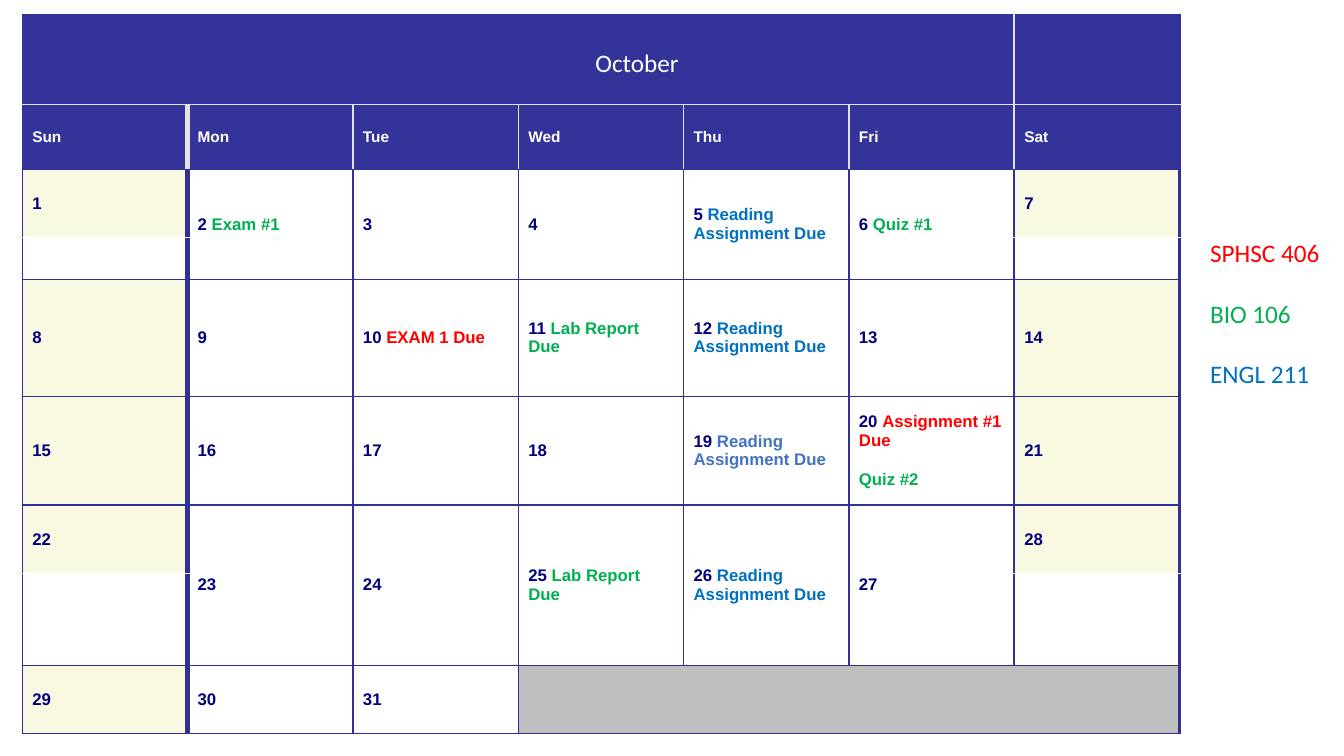
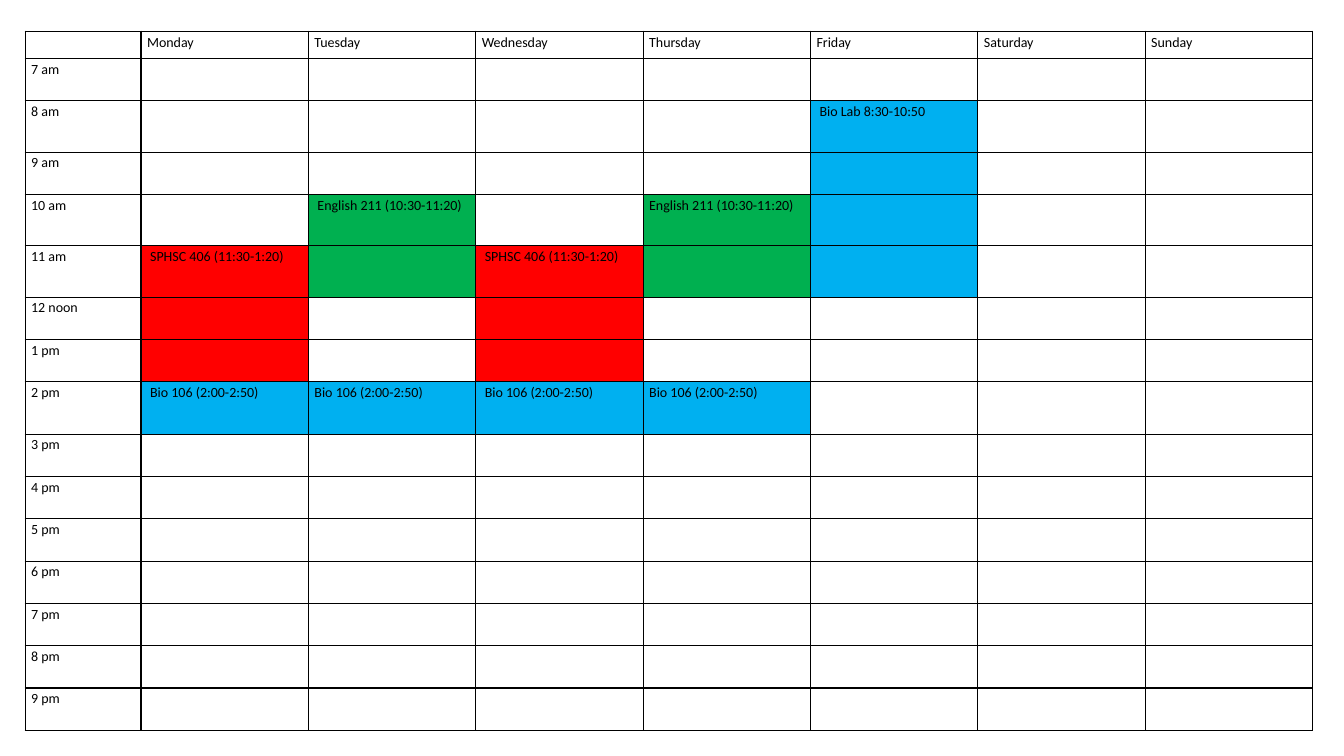
from typing import NamedTuple, Optional

from lxml import etree
from pptx import Presentation, util as u
from pptx.dml.color import RGBColor
from pptx.enum import text as t
from pptx.oxml import ns

# Shared look
NAVY, BAND, LIGHT, CREAM, GRAY = "303096", "333399", "E2E2E2", "F9F9E2", "BFBFBF"
INK, WHITE, BLACK = "00007F", "FFFFFF", "000000"
RED, GREEN, BLUE, STEEL, SKY = "FF0000", "00B050", "0070C0", "4472C4", "00B0F0"
WIDTH, HEIGHT = 13.33, 7.5
NO_TABLE_STYLE = "{2D5ABB26-0587-4C30-8999-92F81FD0307C}"


class Area(NamedTuple):
    """Position and size as percentages of the slide."""
    left: float
    top: float
    width: float = 0
    height: float = 0


class Style(NamedTuple):
    name: str
    size: float
    bold: bool = False
    line_spacing: Optional[float] = None
    gap: float = 0  # points between paragraphs
    align: t.PP_ALIGN = t.PP_ALIGN.LEFT


class Words(NamedTuple):
    text: str
    color: str


class Edge(NamedTuple):
    color: str
    width: float


class Block(NamedTuple):
    """A class that fills some hours on some days of the week."""
    days: tuple
    first_row: int
    rows: int
    color: str
    text: str
    indented: tuple = ()


TITLE = Style("Calibri", 18, align=t.PP_ALIGN.CENTER)
LEGEND = Style("Calibri", 18, gap=21.6)
WEEKDAY = Style("Arial", 11, True)
DAY = Style("Arial", 12, True, gap=14)
HOUR = Style("Calibri", 10, line_spacing=1.15)


def rgb(color: str) -> RGBColor:
    return RGBColor.from_string(color)


def place(area: Area) -> tuple:
    return (u.Inches(WIDTH * area.left / 100), u.Inches(HEIGHT * area.top / 100),
            u.Inches(WIDTH * area.width / 100), u.Inches(HEIGHT * area.height / 100))


def write(frame, lines: list, style: Style) -> None:
    """Write paragraphs, each given as a list of Words."""
    for index, line in enumerate(lines):
        paragraph = frame.add_paragraph() if index else frame.paragraphs[0]
        paragraph.alignment = style.align
        paragraph.line_spacing = style.line_spacing
        paragraph.space_before = u.Pt(style.gap if index else 0)
        font = paragraph.font
        font.name, font.size, font.bold = style.name, u.Pt(style.size), style.bold
        for words in line:
            run = paragraph.add_run()
            run.text = words.text
            run.font.color.rgb = rgb(words.color)


def add_text(slide, area: Area, lines: list, style: Style) -> None:
    frame = slide.shapes.add_textbox(*place(area)).text_frame
    frame.word_wrap = True
    write(frame, lines, style)


def add_grid(slide, area: Area, columns: list, rows: list):
    """Add an unstyled table with the given column widths and row heights in inches."""
    left, top, _, _ = place(area)
    table = slide.shapes.add_table(len(rows), len(columns), left, top,
                                   u.Inches(sum(columns)), u.Inches(sum(rows))).table
    table.first_row = table.horz_banding = False
    table._tbl.tblPr.find(ns.qn("a:tableStyleId")).text = NO_TABLE_STYLE
    for column, width in zip(table.columns, columns):
        column.width = u.Inches(width)
    for row, height in zip(table.rows, rows):
        row.height = u.Inches(height)
    return table


def set_borders(cell, left: Edge, right: Edge, top: Edge, bottom: Edge) -> None:
    properties = cell._tc.get_or_add_tcPr()
    for side, edge in zip("LRTB", (left, right, top, bottom)):
        line = etree.SubElement(properties, ns.qn(f"a:ln{side}"), w=str(u.Pt(edge.width)))
        fill = etree.SubElement(line, ns.qn("a:solidFill"))
        etree.SubElement(fill, ns.qn("a:srgbClr"), val=edge.color)


def set_fill(cell, color: Optional[str]) -> None:
    if color:
        cell.fill.solid()
        cell.fill.fore_color.rgb = rgb(color)
    else:
        cell.fill.background()


# Month calendar
WEEKDAYS = ["Sun", "Mon", "Tue", "Wed", "Thu", "Fri", "Sat"]
MONTH_ROWS = [0.9, 0.64, 0.68, 0.41, 1.16, 1.08, 0.68, 0.91, 0.68]
WEEK_ROWS = [2, 4, 5, 6, 8]
SPLIT_ROWS = [2, 6]  # weeks whose weekend cells are cut in two
LAST_DAY = 31
COLUMN_LINES = [1.08, 3.6, 1.08, 1.08, 1.08, 1.08, 1.93, 2.52]
READING = Words("Reading Assignment Due", BLUE)
LAB_REPORT = Words("Lab Report Due", GREEN)
DUE = {
    2: [Words("Exam #1", GREEN)],
    5: [READING],
    6: [Words("Quiz #1", GREEN)],
    10: [Words("EXAM 1 Due", RED)],
    11: [LAB_REPORT],
    12: [READING],
    19: [READING._replace(color=STEEL)],
    20: [Words("Assignment #1 Due", RED), Words("Quiz #2", GREEN)],
    25: [LAB_REPORT],
    26: [READING],
}
COURSES = [Words("SPHSC 406", RED), Words("BIO 106", GREEN), Words("ENGL 211", BLUE)]


def column_edge(line: int, row: int) -> Edge:
    inside_header = row < 2 and 0 < line < len(WEEKDAYS)
    return Edge(LIGHT if inside_header else NAVY, COLUMN_LINES[line])


def row_edge(line: int) -> Edge:
    if line == 1:
        return Edge(LIGHT, 0.96)
    if line - 1 in SPLIT_ROWS:
        return Edge(WHITE, 0.75)
    return Edge(NAVY, 0.97)


def month_fill(row: int, column: int) -> Optional[str]:
    if row < 2:
        return BAND
    if row == WEEK_ROWS[-1] and column >= 3:
        return GRAY
    return CREAM if row in WEEK_ROWS and column in (0, 6) else None


def add_month(slide) -> None:
    table = add_grid(slide, Area(1.65, 1.87), [1.64] * len(WEEKDAYS), MONTH_ROWS)
    table.cell(0, 0).merge(table.cell(0, 5))
    table.cell(8, 3).merge(table.cell(8, 6))
    for row in SPLIT_ROWS:
        for column in range(1, 6):
            table.cell(row, column).merge(table.cell(row + 1, column))

    for row in range(len(MONTH_ROWS)):
        for column in range(len(WEEKDAYS)):
            cell = table.cell(row, column)
            if cell.is_spanned:
                continue
            across = cell.span_width if cell.is_merge_origin else 1
            down = cell.span_height if cell.is_merge_origin else 1
            set_borders(cell, column_edge(column, row), column_edge(column + across, row),
                        row_edge(row), row_edge(row + down))
            set_fill(cell, month_fill(row, column))
            cell.vertical_anchor = t.MSO_ANCHOR.MIDDLE

    for column, name in enumerate(WEEKDAYS):
        write(table.cell(1, column).text_frame, [[Words(name, WHITE)]], WEEKDAY)
    for day in range(1, LAST_DAY + 1):
        week, column = divmod(day - 1, 7)
        first, *others = DUE.get(day, [None])
        number = [Words(f"{day} ", INK), first] if first else [Words(str(day), INK)]
        write(table.cell(WEEK_ROWS[week], column).text_frame,
              [number] + [[words] for words in others], DAY)

    add_text(slide, Area(32.8, 5.6, 29.2, 5.3), [[Words("October", WHITE)]], TITLE)
    add_text(slide, Area(89.3, 30.8, 10.7, 21.6), [[course] for course in COURSES], LEGEND)


# Weekly timetable
WEEK = ["", "Monday", "Tuesday", "Wednesday", "Thursday", "Friday", "Saturday", "Sunday"]
HOURS = (["7 am", "8 am", "9 am", "10 am", "11 am", "12 noon"]
         + [f"{hour} pm" for hour in range(1, 10)])
TALL_ROWS = {2: 0.51, 4: 0.51, 5: 0.51, 8: 0.52}
BLOCKS = [
    Block((5,), 2, 4, SKY, "Bio Lab 8:30-10:50", indented=(5,)),
    Block((2, 4), 4, 2, GREEN, "English 211 (10:30-11:20)", indented=(2,)),
    Block((1, 3), 5, 3, RED, "SPHSC 406 (11:30-1:20)", indented=(1, 3)),
    Block((1, 2, 3, 4), 8, 1, SKY, "Bio 106 (2:00-2:50)", indented=(1, 3)),
]


def add_timetable(slide) -> None:
    heights = [0.27] + [TALL_ROWS.get(row, 0.42) for row in range(1, len(HOURS) + 1)]
    table = add_grid(slide, Area(1.87, 4.13), [1.15] + [1.66] * 7, heights)
    texts = {(0, column): name for column, name in enumerate(WEEK)}
    texts.update({(row, 0): hour for row, hour in enumerate(HOURS, 1)})
    fills, indented = {}, set()
    for block in BLOCKS:
        for day in block.days:
            texts[block.first_row, day] = block.text
            for row in range(block.first_row, block.first_row + block.rows):
                fills[row, day] = block.color
        indented.update((block.first_row, day) for day in block.indented)

    edge = Edge(BLACK, 1)
    for row in range(len(heights)):
        for column in range(len(WEEK)):
            cell, key = table.cell(row, column), (row, column)
            set_borders(cell, edge, edge, edge, edge)
            set_fill(cell, fills.get(key, WHITE))
            cell.margin_left = u.Inches(0.09 if key in indented else 0.06)
            cell.margin_right = u.Inches(0.06)
            cell.margin_top = cell.margin_bottom = 0
            text = texts.get(key)
            write(cell.text_frame, [[Words(text, BLACK)] if text else []], HOUR)


def main() -> None:
    presentation = Presentation()
    presentation.slide_width, presentation.slide_height = u.Inches(WIDTH), u.Inches(HEIGHT)
    blank = presentation.slide_layouts[6]
    for draw in (add_month, add_timetable):
        draw(presentation.slides.add_slide(blank))
    presentation.save("out.pptx")


if __name__ == "__main__":
    main()
